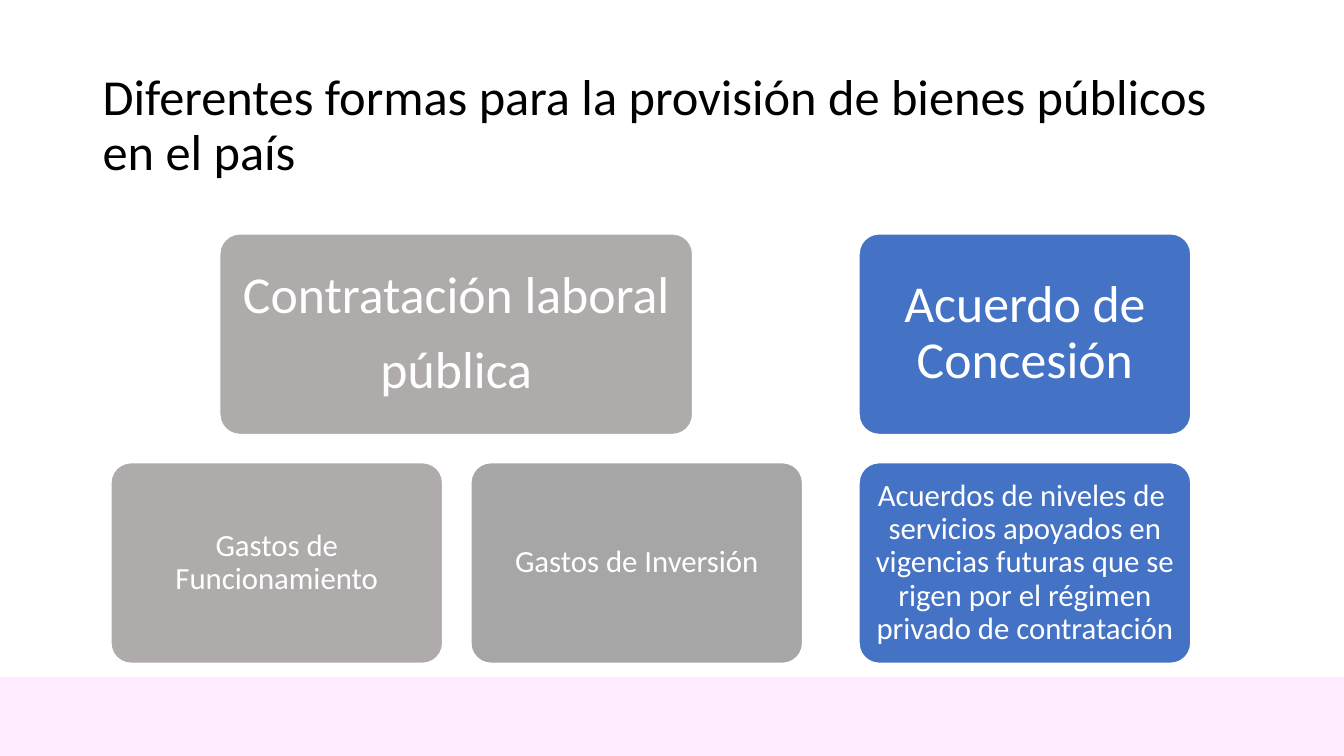
from pptx import Presentation
from pptx.dml.color import RGBColor
from pptx.enum.shapes import MSO_SHAPE
from pptx.enum.text import MSO_ANCHOR, PP_ALIGN
from pptx.util import Inches, Pt

WHITE = RGBColor(0xFF, 0xFF, 0xFF)
BLACK = RGBColor(0x00, 0x00, 0x00)
PINK = RGBColor(0xFF, 0xEB, 0xFF)
WARM_GRAY = RGBColor(0xAF, 0xAB, 0xAB)
GRAY = RGBColor(0xA6, 0xA6, 0xA6)
BLUE = RGBColor(0x44, 0x72, 0xC4)

FONT = "Calibri"
CARD_WIDTH, CARD_HEIGHT = 3.29, 1.99
TOP_ROW, BOTTOM_ROW = 2.32, 4.59
CONCESSION_LEFT = 8.52


def write_text(shape, text, size, color, align=PP_ALIGN.LEFT, space_after=0):
    """Fill the shape with one paragraph per line of text."""
    frame = shape.text_frame
    frame.word_wrap = True
    frame.vertical_anchor = MSO_ANCHOR.MIDDLE
    frame.text = text
    for paragraph in frame.paragraphs:
        paragraph.alignment = align
        paragraph.line_spacing = 0.9
        paragraph.space_after = Pt(space_after)
        paragraph.font.name = FONT
        paragraph.font.size = Pt(size)
        paragraph.font.color.rgb = color


def add_block(slide, kind, left, top, width, height, fill, line):
    shape = slide.shapes.add_shape(
        kind, Inches(left), Inches(top), Inches(width), Inches(height))
    shape.shadow.inherit = False
    shape.fill.solid()
    shape.fill.fore_color.rgb = fill
    shape.line.color.rgb = line
    shape.line.width = Pt(1)
    return shape


def add_card(slide, text, left, top, fill, size, inset, width=CARD_WIDTH):
    card = add_block(slide, MSO_SHAPE.ROUNDED_RECTANGLE, left, top,
                     width, CARD_HEIGHT, fill, WHITE)
    card.adjustments[0] = 0.1
    frame = card.text_frame
    frame.margin_left = frame.margin_right = Inches(inset)
    frame.margin_top = frame.margin_bottom = Inches(inset)
    write_text(card, text, size, WHITE, align=PP_ALIGN.CENTER,
               space_after=round(size * 0.35))


def add_heading_card(slide, text, left, fill, width=CARD_WIDTH):
    add_card(slide, text, left, TOP_ROW, fill, size=37, inset=0.15, width=width)


def add_detail_card(slide, text, left, fill):
    add_card(slide, text, left, BOTTOM_ROW, fill, size=22, inset=0.09)


def add_title(slide, text):
    title = slide.shapes.add_textbox(
        Inches(0.92), Inches(0.53), Inches(11.5), Inches(1.45))
    write_text(title, text, 36, BLACK)


def main():
    presentation = Presentation()
    presentation.slide_width = Inches(13.33)
    presentation.slide_height = Inches(7.5)
    slide = presentation.slides.add_slide(presentation.slide_layouts[6])

    add_block(slide, MSO_SHAPE.RECTANGLE, 0, 6.72, 13.33, 0.78, PINK, PINK)
    add_title(slide, "Diferentes formas para la provisión de bienes públicos en el país")

    add_heading_card(slide, "Contratación laboral\npública", 2.18, WARM_GRAY, width=4.69)
    add_detail_card(slide, "Gastos de Funcionamiento", 1.1, WARM_GRAY)
    add_detail_card(slide, "Gastos de Inversión", 4.67, GRAY)

    add_heading_card(slide, "Acuerdo de Concesión", CONCESSION_LEFT, BLUE)
    add_detail_card(
        slide,
        "Acuerdos de niveles de  servicios apoyados en vigencias futuras "
        "que se rigen por el régimen privado de contratación",
        CONCESSION_LEFT, BLUE)

    presentation.save("out.pptx")


if __name__ == "__main__":
    main()
